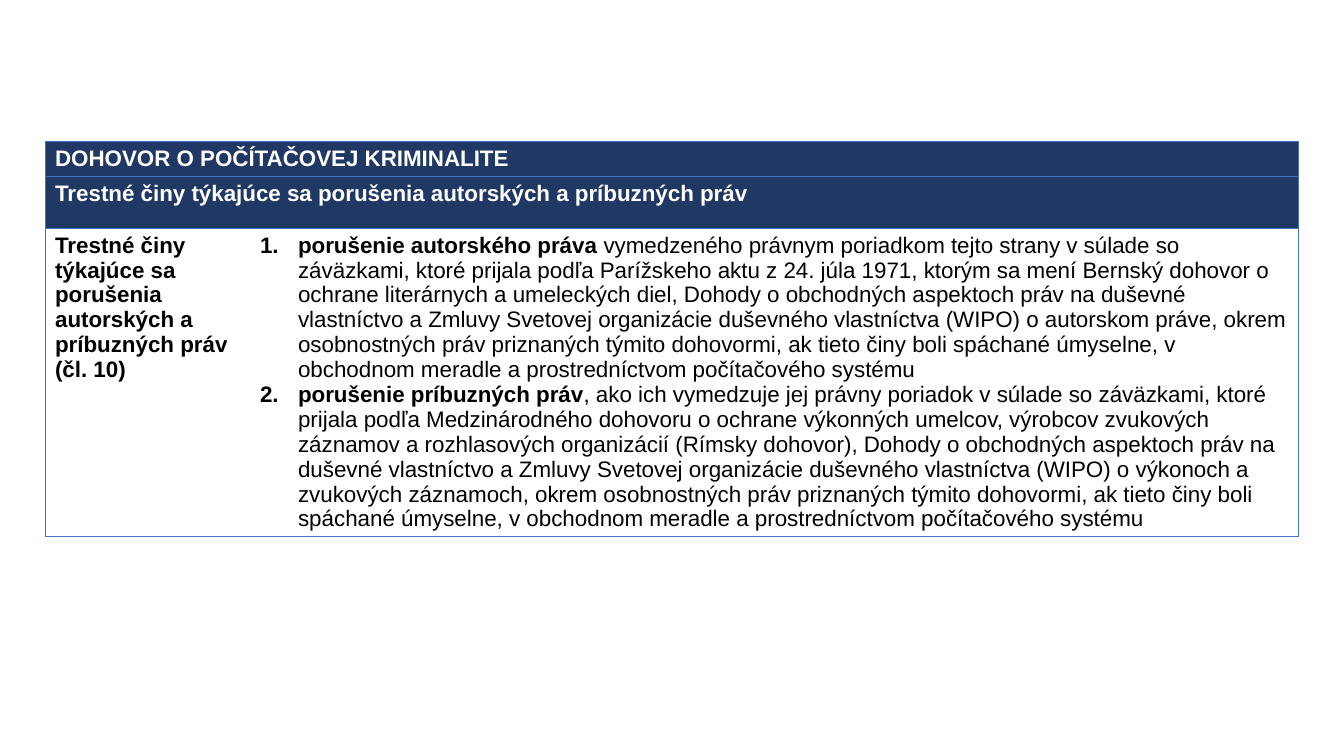
from dataclasses import dataclass

from lxml import etree
from pptx import Presentation
from pptx.dml.color import RGBColor
from pptx.oxml.ns import qn
from pptx.util import Pt

HEADINGS = [
    "DOHOVOR O POČÍTAČOVEJ KRIMINALITE",
    "Trestné činy týkajúce sa porušenia autorských a príbuzných práv",
]
ARTICLE = "Trestné činy týkajúce sa porušenia autorských a príbuzných práv (čl. 10)"
OFFENCES = [
    ("porušenie autorského práva ",
     "vymedzeného právnym poriadkom tejto strany v súlade so záväzkami, ktoré prijala podľa "
     "Parížskeho aktu z 24. júla 1971, ktorým sa mení Bernský dohovor o ochrane literárnych a "
     "umeleckých diel, Dohody o obchodných aspektoch práv na duševné vlastníctvo a Zmluvy "
     "Svetovej organizácie duševného vlastníctva (WIPO) o autorskom práve, okrem osobnostných "
     "práv priznaných týmito dohovormi, ak tieto činy boli spáchané úmyselne, v obchodnom "
     "meradle a prostredníctvom počítačového systému"),
    ("porušenie príbuzných práv",
     ", ako ich vymedzuje jej právny poriadok v súlade so záväzkami, ktoré prijala podľa "
     "Medzinárodného dohovoru o ochrane výkonných umelcov, výrobcov zvukových záznamov a "
     "rozhlasových organizácií (Rímsky dohovor), Dohody o obchodných aspektoch práv na duševné "
     "vlastníctvo a Zmluvy Svetovej organizácie duševného vlastníctva (WIPO) o výkonoch a "
     "zvukových záznamoch, okrem osobnostných práv priznaných týmito dohovormi, ak tieto činy "
     "boli spáchané úmyselne, v obchodnom meradle a prostredníctvom počítačového systému"),
]


@dataclass(frozen=True)
class Theme:
    font: str = "Arial"
    size: int = 16
    navy: str = "203864"
    border: str = "4472C4"
    white: str = "FFFFFF"
    black: str = "000000"
    border_width: float = 0.5


THEME = Theme()
SLIDE_WIDTH, SLIDE_HEIGHT = 1344, 756
TABLE_LEFT, TABLE_TOP = 45, 141
COLUMN_WIDTHS = [205, 1048]
ROW_HEIGHTS = [35, 52, 308]
NUMBER_INDENT = 38
BLANK_LAYOUT = 6


def px(length):
    return round(length * 914400 / 100.8)


def write(paragraph, *runs, color=THEME.black, numbered=False):
    """Add (text, bold) runs, with an automatic number if asked for."""
    if numbered:
        properties = paragraph._p.get_or_add_pPr()
        properties.set("marL", str(px(NUMBER_INDENT)))
        properties.set("indent", str(-px(NUMBER_INDENT)))
        etree.SubElement(properties, qn("a:buFont"), typeface="+mj-lt")
        etree.SubElement(properties, qn("a:buAutoNum"), type="arabicPeriod")
    for text, bold in runs:
        run = paragraph.add_run()
        run.text = text
        run.font.name = THEME.font
        run.font.size = Pt(THEME.size)
        run.font.bold = bold
        run.font.color.rgb = RGBColor.from_string(color)


def draw_borders(cell, visible):
    """Draw the sides named in visible and clear the others."""
    properties = cell._tc.get_or_add_tcPr()
    for side in "LRTB":
        line = etree.SubElement(properties, qn(f"a:ln{side}"), w=str(Pt(THEME.border_width)))
        if side in visible:
            fill = etree.SubElement(line, qn("a:solidFill"))
            etree.SubElement(fill, qn("a:srgbClr"), val=THEME.border)
        else:
            etree.SubElement(line, qn("a:noFill"))


def add_convention_table(slide):
    table = slide.shapes.add_table(
        len(ROW_HEIGHTS), len(COLUMN_WIDTHS), px(TABLE_LEFT), px(TABLE_TOP),
        px(sum(COLUMN_WIDTHS)), px(sum(ROW_HEIGHTS))).table
    table.first_row = table.horz_banding = False
    for column, width in zip(table.columns, COLUMN_WIDTHS):
        column.width = px(width)
    for row, height in zip(table.rows, ROW_HEIGHTS):
        row.height = px(height)

    for index, heading in enumerate(HEADINGS):
        first, last = table.cell(index, 0), table.cell(index, 1)
        first.merge(last)
        for cell in (first, last):
            draw_borders(cell, "LRTB")
            cell.fill.solid()
            cell.fill.fore_color.rgb = RGBColor.from_string(THEME.navy)
        write(first.text_frame.paragraphs[0], (heading, True), color=THEME.white)

    article, offences = table.cell(len(HEADINGS), 0), table.cell(len(HEADINGS), 1)
    for cell, sides in ((article, "LTB"), (offences, "RTB")):
        draw_borders(cell, sides)
        cell.fill.background()
    write(article.text_frame.paragraphs[0], (ARTICLE, True))
    frame = offences.text_frame
    for index, (offence, definition) in enumerate(OFFENCES):
        paragraph = frame.add_paragraph() if index else frame.paragraphs[0]
        write(paragraph, (offence, True), (definition, False), numbered=True)


def main():
    presentation = Presentation()
    presentation.slide_width = px(SLIDE_WIDTH)
    presentation.slide_height = px(SLIDE_HEIGHT)
    add_convention_table(presentation.slides.add_slide(presentation.slide_layouts[BLANK_LAYOUT]))
    presentation.save("out.pptx")


if __name__ == "__main__":
    main()
